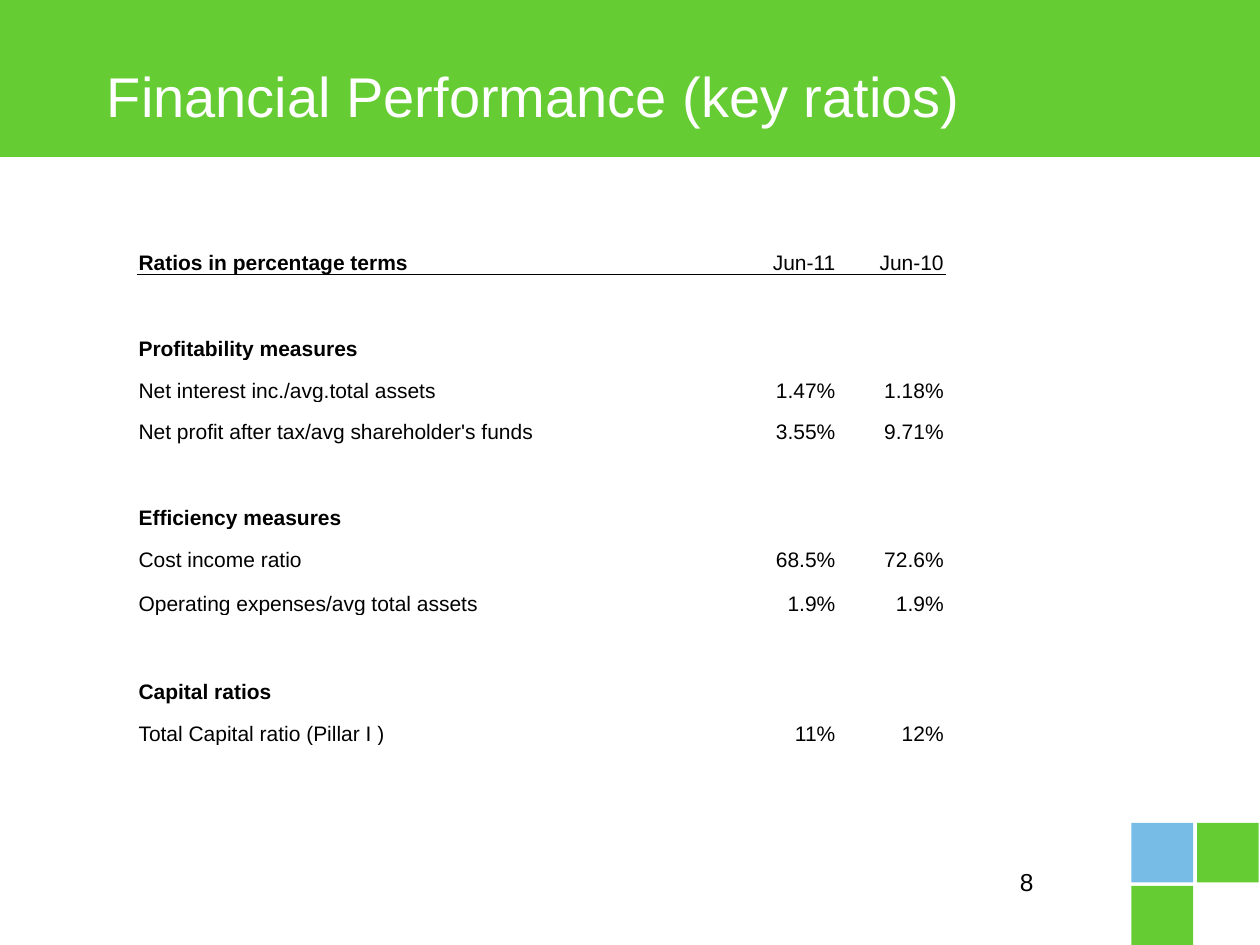
from lxml import etree
from pptx import Presentation
from pptx.dml.color import RGBColor
from pptx.enum.shapes import MSO_SHAPE
from pptx.enum.text import MSO_ANCHOR, PP_ALIGN
from pptx.oxml.ns import qn
from pptx.util import Pt

RECTANGLE = MSO_SHAPE.RECTANGLE
LEFT, RIGHT = PP_ALIGN.LEFT, PP_ALIGN.RIGHT
BOTTOM = MSO_ANCHOR.BOTTOM

COLORS = {"green": "66CC33", "blue": "76BCE6", "white": "FFFFFF", "black": "000000"}
FONT = "Arial"
CELL_FORMAT = {
    "margin_left": Pt(0.7),
    "margin_right": Pt(0.7),
    "margin_top": Pt(0.7),
    "margin_bottom": Pt(0),
    "vertical_anchor": BOTTOM,
}

COLUMN_WIDTHS = [337.7, 61.9, 61.9]
TALL_ROW, SHORT_ROW = 25.2, 23.9
TALL_ROWS = {0, 2, 6, 8, 9, 10}
RATIOS = [
    ("Ratios in percentage terms", "Jun-11", "Jun-10"),
    (),
    ("Profitability measures",),
    ("Net interest inc./avg.total assets", "1.47%", "1.18%"),
    ("Net profit after tax/avg shareholder's funds", "3.55%", "9.71%"),
    (),
    ("Efficiency measures",),
    ("Cost income ratio", "68.5%", "72.6%"),
    ("Operating expenses/avg total assets", "1.9%", "1.9%"),
    (),
    ("Capital ratios",),
    ("Total Capital ratio (Pillar I )", "11%", "12%"),
]


def rgb(color):
    return RGBColor.from_string(COLORS[color])


def write(paragraph, text, size, color, align=LEFT, bold=False):
    paragraph.alignment = align
    run = paragraph.add_run()
    run.text = text
    run.font.color.rgb = rgb(color)
    for name, value in {"name": FONT, "size": Pt(size), "bold": bold}.items():
        setattr(run.font, name, value)


def add_block(slide, left, top, width, height, color):
    block = slide.shapes.add_shape(RECTANGLE, Pt(left), Pt(top), Pt(width), Pt(height))
    block.shadow.inherit = False
    block.fill.solid()
    block.fill.fore_color.rgb = rgb(color)
    block.line.fill.background()
    return block


def add_label(slide, left, top, width, height, text, size, color, align=LEFT):
    frame = slide.shapes.add_textbox(Pt(left), Pt(top), Pt(width), Pt(height)).text_frame
    frame.word_wrap = True
    write(frame.paragraphs[0], text, size, color, align)
    return frame


def add_border(cell, side):
    """Rule one side of a cell; side is the tag lnT or lnB."""
    properties = cell._tc.get_or_add_tcPr()
    border = etree.Element(qn(f"a:{side}"), w=str(Pt(0.5)))
    fill = etree.SubElement(border, qn("a:solidFill"))
    etree.SubElement(fill, qn("a:srgbClr"), val=COLORS["black"])
    properties.insert(0, border)


def add_ratio_table(slide, left, top):
    heights = [TALL_ROW if i in TALL_ROWS else SHORT_ROW for i in range(len(RATIOS))]
    table = slide.shapes.add_table(
        len(RATIOS), len(COLUMN_WIDTHS), Pt(left), Pt(top),
        Pt(sum(COLUMN_WIDTHS)), Pt(sum(heights))).table
    table.first_row = table.horz_banding = False
    for column, width in zip(table.columns, COLUMN_WIDTHS):
        column.width = Pt(width)
    for row, height in zip(table.rows, heights):
        row.height = Pt(height)

    for r, entries in enumerate(RATIOS):
        for c in range(len(COLUMN_WIDTHS)):
            cell = table.cell(r, c)
            cell.fill.background()
            for name, value in CELL_FORMAT.items():
                setattr(cell, name, value)
            if c < len(entries):
                is_heading = c == 0 and (r == 0 or len(entries) == 1)
                write(cell.text_frame.paragraphs[0], entries[c], 12, "black",
                      RIGHT if c else LEFT, is_heading)
            if r < 2:
                add_border(cell, "lnT" if r else "lnB")


def main():
    prs = Presentation()
    prs.slide_width, prs.slide_height = Pt(720), Pt(540)
    slide = prs.slides.add_slide(prs.slide_layouts[6])

    banner = add_block(slide, 0, 0, 720, 89.3, "green")
    banner.line.color.rgb = rgb("green")
    banner.line.width = Pt(0.75)

    for left, top, color in [(646.5, 506.2, "green"), (684, 470.2, "green"),
                             (646.5, 470.2, "blue")]:
        add_block(slide, left, top, 35.3, 34, color)

    add_label(slide, 447.8, 491.8, 149.8, 36, "8", 14, "black", RIGHT)
    title = add_label(slide, 54, 28.1, 612, 61.2,
                      "Financial Performance (key ratios)", 32, "white")
    title.margin_top = Pt(7.2)
    add_ratio_table(slide, 78.5, 131.8)

    prs.save("out.pptx")


if __name__ == "__main__":
    main()
